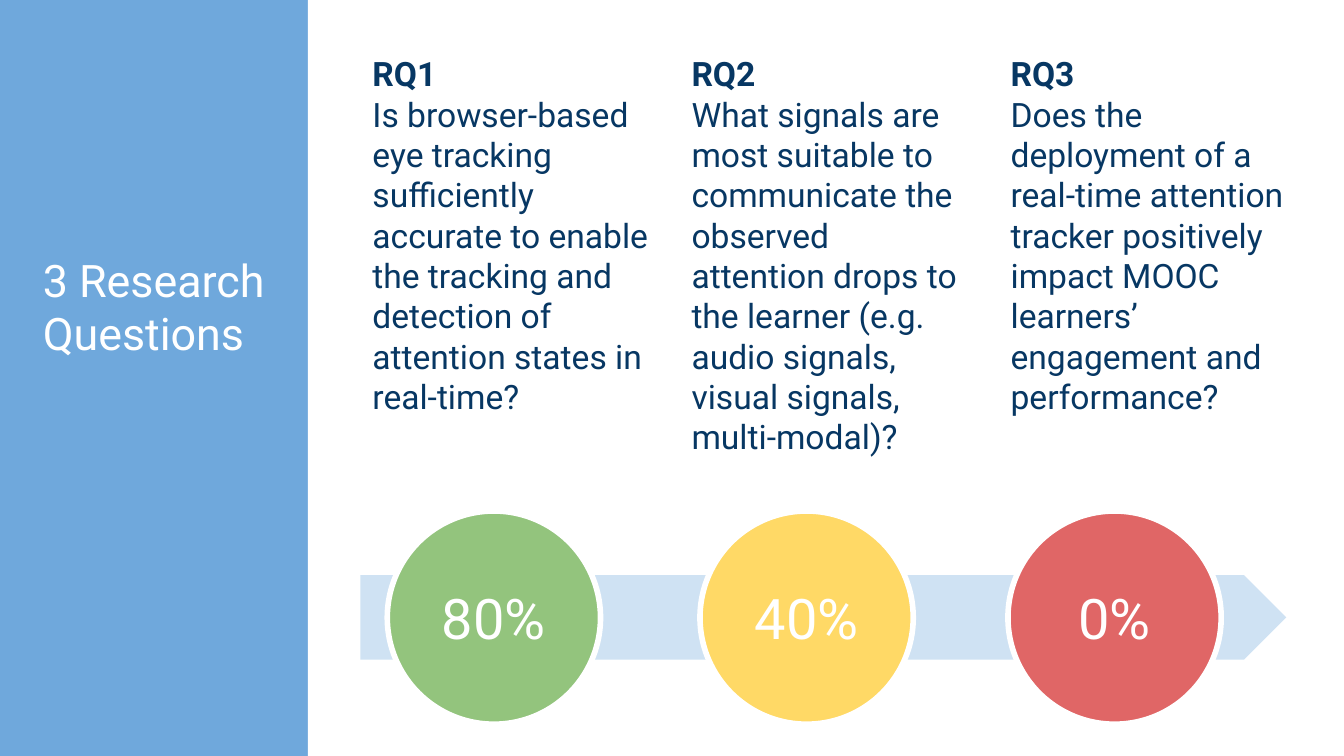
from pptx import Presentation
from pptx import util as u
from pptx.dml.color import RGBColor
from pptx.enum import shapes, text

NAVY, WHITE, SKY, PALE = "073763", "FFFFFF", "6FA8DC", "CFE2F3"
SHAPE = shapes.MSO_SHAPE
ALIGN = text.PP_ALIGN
ANCHOR = text.MSO_ANCHOR


def paint(color_format, hex_color):
    color_format.rgb = RGBColor.from_string(hex_color)


class Deck:
    font = "Roboto"
    inset = u.Cm(0.25)

    def __init__(self, width, height):
        self.presentation = Presentation()
        self.presentation.slide_width = u.Cm(width)
        self.presentation.slide_height = u.Cm(height)
        self.slide = None

    def add_slide(self, background):
        self.slide = self.presentation.slides.add_slide(self.presentation.slide_layouts[6])
        fill = self.slide.background.fill
        fill.solid()
        paint(fill.fore_color, background)

    def set_text(self, frame, paragraphs, size, color, align=ALIGN.LEFT, anchor=ANCHOR.TOP):
        frame.word_wrap = True
        frame.vertical_anchor = anchor
        frame.margin_left = frame.margin_right = self.inset
        frame.margin_top = frame.margin_bottom = self.inset
        for index, (words, bold) in enumerate(paragraphs):
            paragraph = frame.add_paragraph() if index else frame.paragraphs[0]
            paragraph.alignment = align
            run = paragraph.add_run()
            run.text = words
            run.font.name = self.font
            run.font.size = u.Pt(size)
            run.font.bold = bold
            paint(run.font.color, color)

    def text_box(self, left, top, width, height, paragraphs, size, color):
        box = self.slide.shapes.add_textbox(*map(u.Cm, (left, top, width, height)))
        self.set_text(box.text_frame, paragraphs, size, color)

    def shape(self, kind, left, top, width, height, fill):
        shape = self.slide.shapes.add_shape(kind, *map(u.Cm, (left, top, width, height)))
        shape.shadow.inherit = False
        shape.fill.solid()
        paint(shape.fill.fore_color, fill)
        shape.line.fill.background()
        return shape

    def badge(self, left, top, diameter, fill, label):
        circle = self.shape(SHAPE.OVAL, left, top, diameter, diameter, fill)
        circle.line.width = u.Pt(3)
        circle.line.fill.solid()
        paint(circle.line.color, WHITE)
        self.set_text(circle.text_frame, [(label, False)], 30, WHITE, ALIGN.CENTER, ANCHOR.MIDDLE)


QUESTIONS = [
    "Is browser-based eye tracking sufficiently accurate to enable the tracking "
    "and detection of attention states in real-time?",
    "What signals are most suitable to communicate the observed attention drops "
    "to the learner (e.g. audio signals, visual signals, multi-modal)?",
    "Does the deployment of a real-time attention tracker positively impact MOOC "
    "learners’ engagement and performance?",
]
PROGRESS = [
    (7.32, "93C47D", "80%"),
    (13.23, "FFD966", "40%"),
    (19.05, "E06666", "0%"),
]


def main():
    deck = Deck(25.4, 14.29)
    deck.add_slide(SKY)
    deck.shape(SHAPE.RECTANGLE, 5.82, 0, 19.58, 14.29, WHITE)

    for index, question in enumerate(QUESTIONS):
        paragraphs = [(f"RQ{index + 1}", True), (question, False)]
        deck.text_box(6.79 + index * 6.03, 0.76, 5.74, 12.93, paragraphs, 18, NAVY)

    deck.shape(SHAPE.PENTAGON, 6.81, 10.87, 17.5, 1.6, PALE)
    for left, fill, label in PROGRESS:
        deck.badge(left, 9.66, 4.03, fill, label)

    deck.text_box(0.56, 4.52, 4.75, 2.39, [("3 Research Questions", False)], 24, WHITE)
    deck.presentation.save("out.pptx")


if __name__ == "__main__":
    main()
